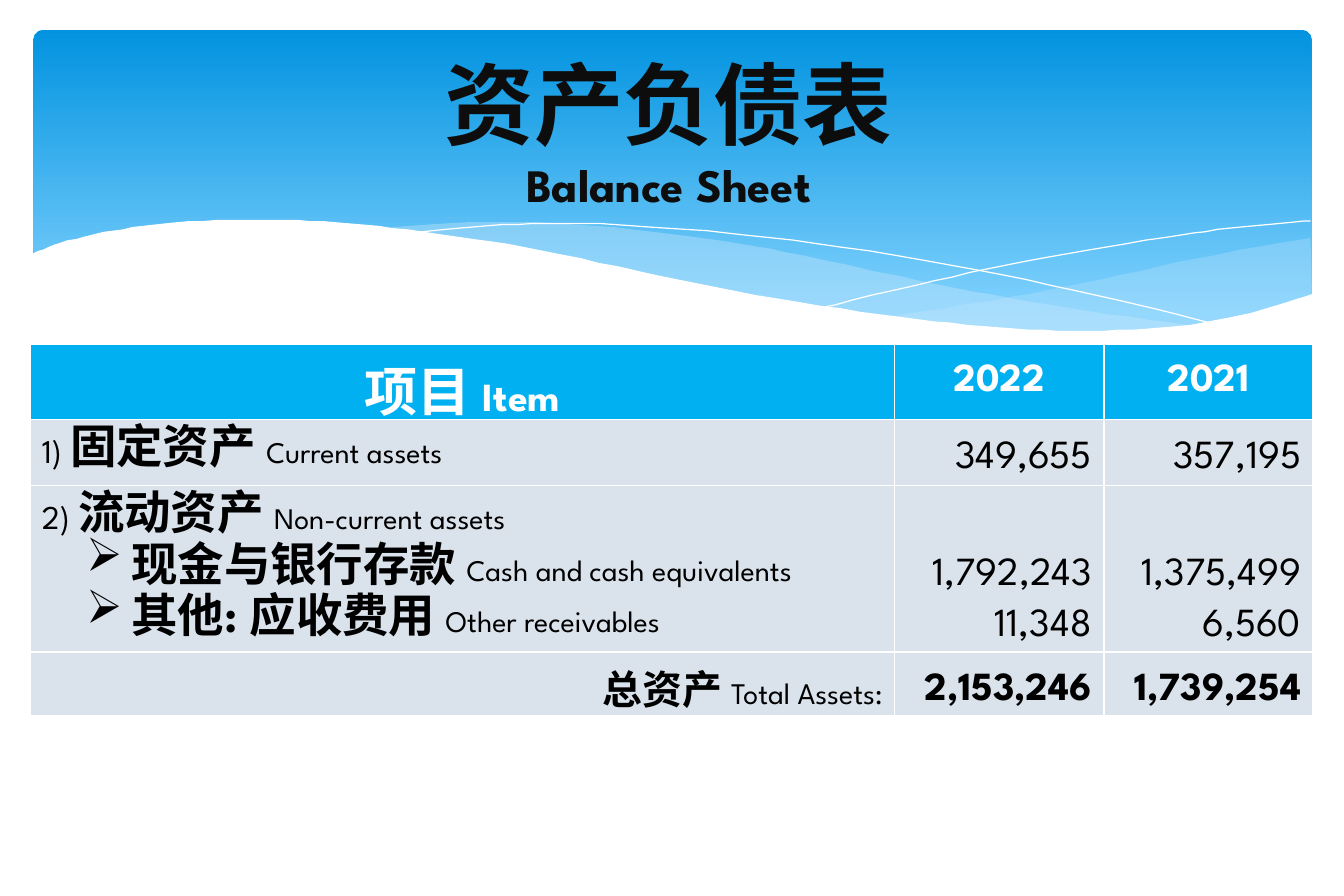
from dataclasses import dataclass

from lxml.etree import SubElement
from pptx import Presentation
from pptx.dml.color import RGBColor as RGB
from pptx.enum.shapes import MSO_SHAPE as Shape
from pptx.enum.text import MSO_ANCHOR as Anchor, PP_ALIGN as Align
from pptx.oxml import parse_xml
from pptx.oxml.ns import nsdecls, qn
from pptx.util import Pt

PX = 9144  # 100 px to the inch


@dataclass(frozen=True)
class Theme:
    font: str = "League Spartan"
    sky_top: str = "0293E0"
    sky_bottom: str = "83D3FE"
    mist: str = "C6E7FC"
    title: str = "0D0D0D"
    header: str = "00B0F0"
    body: str = "DAE2EB"
    white: str = "FFFFFF"
    black: str = "000000"
    title_size: int = 54
    header_size: int = 32
    name_size: int = 28
    value_size: int = 24
    number_size: int = 20
    note_size: int = 18
    leading: int = 31


T = Theme()


def set_all(target, values):
    for name, value in values.items():
        setattr(target, name, value)


def smooth(points, steps=6):
    """Return a Catmull-Rom curve through the points, in whole px."""
    padded = [points[0], *points, points[-1]]
    curve = [points[0]]
    for a, b, c, d in zip(padded, padded[1:], padded[2:], padded[3:]):
        for t in (i / steps for i in range(1, steps + 1)):
            curve.append(tuple(
                round((2 * q + (r - p) * t + (2 * p - 5 * q + 4 * r - s) * t ** 2
                       + (3 * q - p - 3 * r + s) * t ** 3) / 2)
                for p, q, r, s in zip(a, b, c, d)))
    return curve


class SlideBuilder:
    def __init__(self, prs, theme):
        self.theme = theme
        self.s = prs.slides.add_slide(prs.slide_layouts[6])

    def banner(self, x, y, w, h):
        sp = self.s.shapes.add_shape(Shape.ROUNDED_RECTANGLE, *(v * PX for v in (x, y, w, h)))
        sp.adjustments[0] = 0.03
        sp.shadow.inherit = False
        sp.line.fill.background()
        sp.fill.gradient()
        sp.fill.gradient_angle = 270
        stops = ((0, self.theme.sky_top), (0.9, self.theme.sky_bottom))
        for stop, (position, color) in zip(sp.fill.gradient_stops, stops):
            stop.position = position
            stop.color.rgb = RGB.from_string(color)

    def freeform(self, points, closed):
        builder = self.s.shapes.build_freeform(*points[0], scale=PX)
        builder.add_line_segments(points[1:], close=closed)
        sp = builder.convert_to_shape()
        sp.shadow.inherit = False
        return sp

    def wave(self, points, color, opacity=100):
        sp = self.freeform(points, True)
        sp.line.fill.background()
        sp.fill.solid()
        sp.fill.fore_color.rgb = RGB.from_string(color)
        if opacity < 100:
            clr = sp._element.spPr.find(qn("a:solidFill")).find(qn("a:srgbClr"))
            SubElement(clr, qn("a:alpha"), val=str(opacity * 1000))

    def hairline(self, points):
        sp = self.freeform(points, False)
        sp.fill.background()
        sp.line.color.rgb = RGB.from_string(self.theme.white)
        sp.line.width = 0

    def fill_text(self, tf, lines, color, **paragraph):
        """Fill a text frame; a line is a list of (text, size, bold)."""
        for i, line in enumerate(lines):
            p = tf.add_paragraph() if i else tf.paragraphs[0]
            set_all(p, paragraph)
            for text, size, bold in line:
                r = p.add_run()
                r.text = text
                set_all(r.font, {"name": self.theme.font, "size": Pt(size), "bold": bold})
                r.font.color.rgb = RGB.from_string(color)

    def text(self, x, y, w, h, lines, color):
        tf = self.s.shapes.add_textbox(*(v * PX for v in (x, y, w, h))).text_frame
        tf.word_wrap = True
        self.fill_text(tf, lines, color, alignment=Align.CENTER)

    def bullet(self, p):
        p_pr = p._p.get_or_add_pPr()
        for name, value in {"marL": 75, "indent": -38}.items():
            p_pr.set(name, str(value * PX))
        SubElement(p_pr, qn("a:buChar"), char="➢")

    def cell(self, cell, lines, fill, color, top=5, anchor=Anchor.TOP, **paragraph):
        set_all(cell, {"margin_left": 10 * PX, "margin_right": 10 * PX, "margin_top": top * PX,
                       "margin_bottom": 5 * PX, "vertical_anchor": anchor})
        cell.fill.solid()
        cell.fill.fore_color.rgb = RGB.from_string(fill)
        for i, side in enumerate("LRTB"):
            cell._tc.get_or_add_tcPr().insert(i, parse_xml(
                f'<a:ln{side} {nsdecls("a")} w="{Pt(1)}"><a:solidFill>'
                f'<a:srgbClr val="{self.theme.white}"/></a:solidFill></a:ln{side}>'))
        self.fill_text(cell.text_frame, lines, color, **paragraph)

    def table(self, x, y, widths, heights):
        frame = self.s.shapes.add_table(len(heights), len(widths), x * PX, y * PX,
                                        sum(widths) * PX, sum(heights) * PX)
        tbl = frame.table
        set_all(tbl, {"first_row": False, "horz_banding": False})
        for col, width in zip(tbl.columns, widths):
            col.width = width * PX
        for row, height in zip(tbl.rows, heights):
            row.height = height * PX
        return tbl


def item(name, note, number=""):
    runs = [(name, T.name_size, True), (note, T.note_size, False)]
    return [(number, T.number_size, False), *runs] if number else runs


def draw_background(b):
    b.banner(28, 25, 1070, 270)
    b.wave(smooth([(1097, 199), (1003, 216), (906, 237), (820, 253), (744, 265)])
           + smooth([(744, 265), (823, 274), (904, 278), (981, 274), (1044, 263), (1098, 247)]),
           T.mist, 29)
    b.wave(smooth([(1004, 273), (908, 260), (794, 240), (673, 214), (593, 200), (497, 189),
                   (406, 186), (322, 191)])
           + smooth([(322, 191), (408, 203), (506, 222), (637, 248), (749, 266), (842, 276),
                     (920, 278), (1004, 273)]), T.mist, 40)
    b.hairline(smooth([(348, 195), (408, 189), (487, 187), (574, 192), (684, 204), (818, 226),
                       (935, 251), (1021, 272)]))
    b.hairline(smooth([(690, 257), (782, 235), (873, 216), (974, 199), (1039, 190), (1097, 185)]))
    b.wave(smooth([(1099, 246), (1047, 262), (985, 273), (910, 277), (837, 274), (752, 265),
                   (652, 250), (535, 227), (440, 207), (355, 194), (281, 186), (217, 184),
                   (148, 186), (95, 193), (51, 203), (26, 213)]) + [(26, 329), (1099, 329)],
           T.white)


def draw_table(b):
    tbl = b.table(25, 288, (724, 175, 175), (63, 55, 139, 53))
    head = {"fill": T.header, "color": T.white, "anchor": Anchor.MIDDLE, "alignment": Align.CENTER}
    b.cell(tbl.cell(0, 0), [[("项目 ", T.header_size, True), ("Item", T.value_size, True)]], **head)
    body = {"fill": T.body, "color": T.black}
    spaced = {**body, "line_spacing": Pt(T.leading)}
    b.cell(tbl.cell(1, 0), [item("固定资产 ", "Current assets", "1) ")], **spaced)
    b.cell(tbl.cell(2, 0), [item("流动资产 ", "Non-current assets", "2) "),
                            item("现金与银行存款 ", "Cash and cash equivalents"),
                            item("其他: 应收费用 ", "Other receivables")], **spaced)
    for p in tbl.cell(2, 0).text_frame.paragraphs[1:]:
        b.bullet(p)
    b.cell(tbl.cell(3, 0), [[("总资产 ", T.value_size, True), ("Total Assets:", T.note_size, False)]],
           anchor=Anchor.MIDDLE, alignment=Align.RIGHT, **body)

    years = (("2022", "349,655", ("1,792,243", "11,348"), "2,153,246"),
             ("2021", "357,195", ("1,375,499", "6,560"), "1,739,254"))
    figures = {**spaced, "alignment": Align.RIGHT}
    for col, (year, fixed, current, total) in enumerate(years, 1):
        b.cell(tbl.cell(0, col), [[(year, T.value_size, True)]], **head)
        b.cell(tbl.cell(1, col), [[(fixed, T.value_size, False)]], **figures)
        b.cell(tbl.cell(2, col), [[(v, T.value_size, False)] for v in current], top=48, **figures)
        b.cell(tbl.cell(3, col), [[(total, T.value_size, True)]], anchor=Anchor.MIDDLE, **figures)


def main():
    prs = Presentation()
    set_all(prs, {"slide_width": 1125 * PX, "slide_height": 750 * PX})
    b = SlideBuilder(prs, T)
    draw_background(b)
    b.text(95, 36, 929, 148, [[("资产负债表", T.title_size, True)],
                              [("Balance Sheet", T.name_size, True)]], T.title)
    draw_table(b)
    prs.save("out.pptx")


if __name__ == "__main__":
    main()
